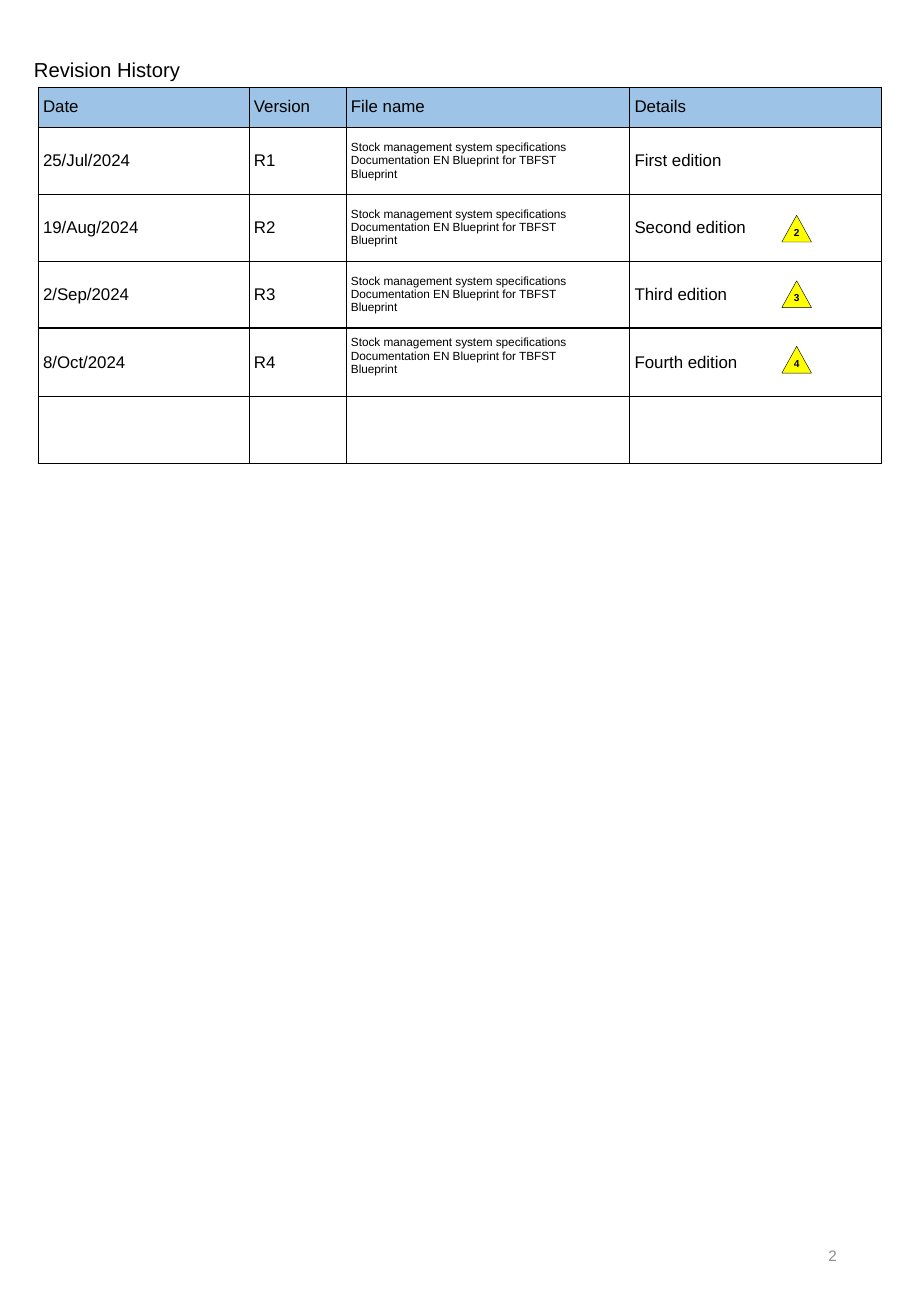
import pptx
import pptx.dml.color
import pptx.enum.shapes
import pptx.enum.text
import pptx.oxml
import pptx.oxml.ns
import pptx.util

Cm = pptx.util.Cm
Pt = pptx.util.Pt
ALIGN = pptx.enum.text.PP_ALIGN
MIDDLE = pptx.enum.text.MSO_ANCHOR.MIDDLE

BLACK = pptx.dml.color.RGBColor(0x00, 0x00, 0x00)
GREY = pptx.dml.color.RGBColor(0x8C, 0x8C, 0x8C)
HEADER_BLUE = pptx.dml.color.RGBColor(0x9D, 0xC3, 0xE6)
MARK_YELLOW = pptx.dml.color.RGBColor(0xFF, 0xFF, 0x00)

FILE_NAME = (
    "Stock management system specifications\n"
    "Documentation EN Blueprint for TBFST\n"
    "Blueprint"
)
REVISIONS = [
    ("Date", "Version", "File name", "Details"),
    ("25/Jul/2024", "R1", FILE_NAME, "First edition"),
    ("19/Aug/2024", "R2", FILE_NAME, "Second edition"),
    ("2/Sep/2024", "R3", FILE_NAME, "Third edition"),
    ("8/Oct/2024", "R4", FILE_NAME, "Fourth edition"),
    ("", "", "", ""),
]
COLUMN_WIDTHS = [4.41, 2.03, 5.93, 5.27]
ROW_HEIGHTS = [0.84, 1.4, 1.4, 1.4, 1.44, 1.4]


def write(frame, text, size, color=BLACK, align=ALIGN.LEFT, bold=False):
    frame.text = text
    frame.vertical_anchor = MIDDLE
    for paragraph in frame.paragraphs:
        paragraph.alignment = align
        paragraph.font.name = "Arial"
        paragraph.font.size = Pt(size)
        paragraph.font.bold = bold
        paragraph.font.color.rgb = color


def add_heading(slide):
    heading = slide.shapes.title
    heading.left, heading.top = Cm(0.3), Cm(1.07)
    heading.width, heading.height = Cm(4.2), Cm(0.76)
    frame = heading.text_frame
    write(frame, "Revision History", 12)
    frame.auto_size = pptx.enum.text.MSO_AUTO_SIZE.NONE
    frame.word_wrap = False
    frame.margin_left = Cm(0.41)


def draw_borders(cell):
    properties = cell._tc.get_or_add_tcPr()
    for side in ("lnL", "lnR", "lnT", "lnB"):
        properties.append(pptx.oxml.parse_xml(
            f'<a:{side} {pptx.oxml.ns.nsdecls("a")} w="{Pt(0.75)}">'
            f'<a:solidFill><a:srgbClr val="{BLACK}"/></a:solidFill></a:{side}>'
        ))


def fill_cell(cell, text, is_header):
    write(cell.text_frame, text, 7 if text == FILE_NAME else 10)
    cell.vertical_anchor = MIDDLE
    cell.margin_left = Cm(0.1)
    draw_borders(cell)
    if is_header:
        cell.fill.solid()
        cell.fill.fore_color.rgb = HEADER_BLUE
    else:
        cell.fill.background()


def add_history(slide):
    history = slide.shapes.add_table(
        len(REVISIONS), len(COLUMN_WIDTHS), Cm(0.8), Cm(1.82),
        Cm(sum(COLUMN_WIDTHS)), Cm(sum(ROW_HEIGHTS)),
    ).table
    history.first_row = False
    history.horz_banding = False
    for column, width in zip(history.columns, COLUMN_WIDTHS):
        column.width = Cm(width)
    for index, (row, height) in enumerate(zip(history.rows, ROW_HEIGHTS)):
        row.height = Cm(height)
        for cell, text in zip(row.cells, REVISIONS[index]):
            fill_cell(cell, text, index == 0)
    history.cell(4, 2).margin_bottom = Cm(0.4)


def add_page_number(slide):
    page_number = slide.shapes.add_textbox(Cm(13.46), Cm(25.5), Cm(4.29), Cm(1.47))
    write(page_number.text_frame, "2", 9, GREY, ALIGN.RIGHT)
    page_number.text_frame.word_wrap = True


def add_revision_mark(slide, number, top):
    mark = slide.shapes.add_shape(
        pptx.enum.shapes.MSO_SHAPE.ISOSCELES_TRIANGLE,
        Cm(16.35), Cm(top), Cm(0.62), Cm(0.56),
    )
    mark.shadow.inherit = False
    mark.fill.solid()
    mark.fill.fore_color.rgb = MARK_YELLOW
    mark.line.color.rgb = BLACK
    mark.line.width = Pt(0.25)
    write(mark.text_frame, str(number), 6, align=ALIGN.CENTER, bold=True)
    mark.text_frame.word_wrap = False
    mark.text_frame.margin_top = 0


def main():
    presentation = pptx.Presentation()
    presentation.slide_width = Cm(19.05)
    presentation.slide_height = Cm(27.51)
    slide = presentation.slides.add_slide(presentation.slide_layouts[5])
    add_heading(slide)
    add_history(slide)
    add_page_number(slide)
    for step, number in enumerate((2, 3, 4)):
        add_revision_mark(slide, number, 4.5 + 1.37 * step)
    presentation.save("out.pptx")


if __name__ == "__main__":
    main()
